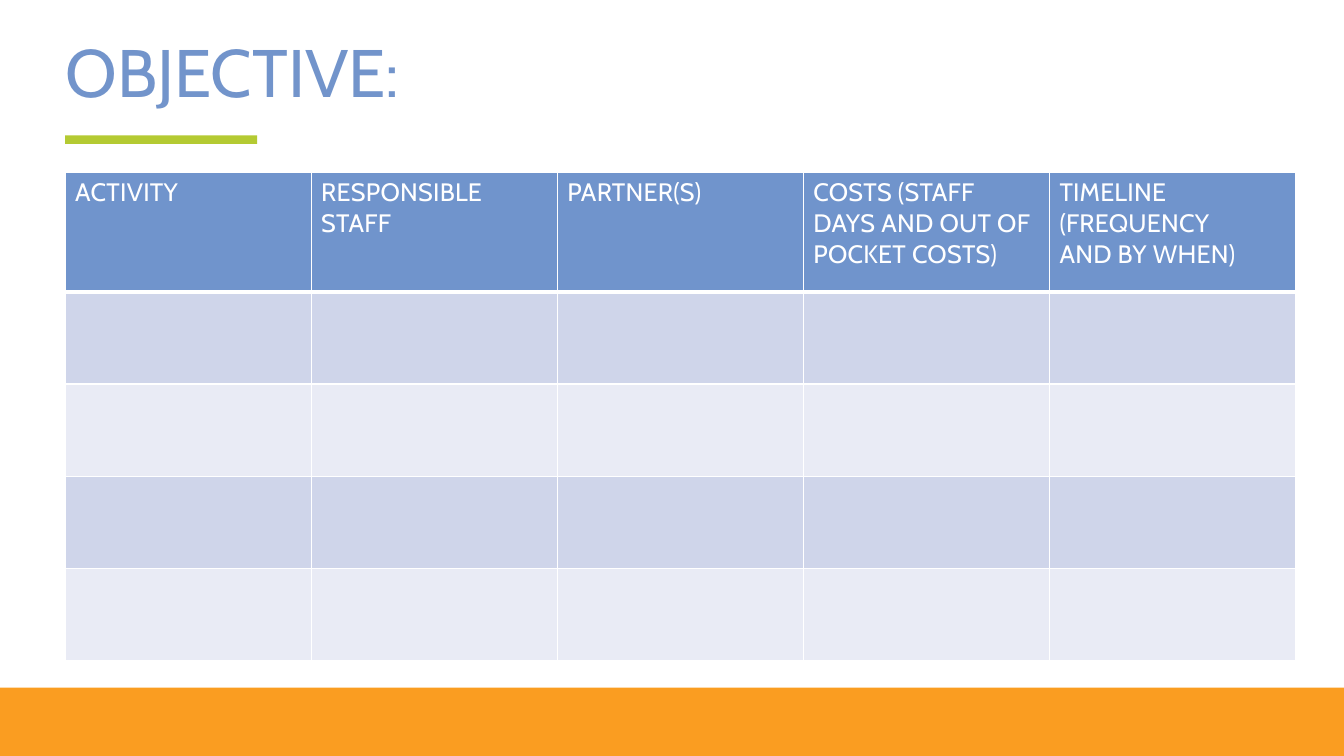
from lxml.etree import SubElement
from pptx import Presentation
from pptx.dml.color import RGBColor
from pptx.enum.shapes import MSO_SHAPE
from pptx.enum.text import MSO_AUTO_SIZE
from pptx.oxml.ns import qn
from pptx.util import Pt

PX = 9525
FONT = "Cabin"
WHITE = RGBColor(0xFF, 0xFF, 0xFF)
TITLE_BLUE = RGBColor(0x72, 0x94, 0xCB)
HEADER_BLUE = RGBColor(0x70, 0x94, 0xCC)
BAND_DARK = RGBColor(0xCF, 0xD5, 0xEA)
BAND_LIGHT = RGBColor(0xE9, 0xEB, 0xF5)
ORANGE = RGBColor(0xFA, 0x9D, 0x21)
GREEN = RGBColor(0xB4, 0xCA, 0x32)

HEADERS = [
    "ACTIVITY",
    "RESPONSIBLE STAFF",
    "PARTNER(S)",
    "COSTS (STAFF DAYS AND OUT OF POCKET COSTS)",
    "TIMELINE (FREQUENCY \nAND BY WHEN)",
]
BODY_ROWS = 4
HEADER_HEIGHT = 114


def px(*lengths):
    return [n * PX for n in lengths]


def write(tf, text, size=18, color=WHITE, spacing=None):
    p = tf.paragraphs[0]
    for i, line in enumerate(text.split("\n")):
        if i:
            p.add_line_break()
        r = p.add_run()
        r.text = line
        r.font.name = FONT
        r.font.size = Pt(size)
        r.font.color.rgb = color
        if spacing is not None:
            r.font._element.set("spc", str(round(spacing * 100)))


def add_title(s, text, x, y, w, h):
    tf = s.shapes.add_textbox(*px(x, y, w, h)).text_frame
    tf.word_wrap = False
    tf.auto_size = MSO_AUTO_SIZE.SHAPE_TO_FIT_TEXT
    write(tf, text, size=48, color=TITLE_BLUE)


def add_bar(s, color, x, y, w, h):
    sp = s.shapes.add_shape(MSO_SHAPE.RECTANGLE, *px(x, y, w, h))
    sp.shadow.inherit = False
    sp.fill.solid()
    sp.fill.fore_color.rgb = color
    sp.line.fill.background()


def set_borders(cell, top, bottom):
    tc_pr = cell._tc.get_or_add_tcPr()
    for side, width in (("L", 1), ("R", 1), ("T", top), ("B", bottom)):
        ln = SubElement(tc_pr, qn(f"a:ln{side}"), w=str(Pt(width)))
        fill = SubElement(ln, qn("a:solidFill"))
        SubElement(fill, qn("a:srgbClr"), val=str(WHITE))


def style_cell(cell, row):
    set_borders(cell, top=3 if row == 1 else 1, bottom=3 if row == 0 else 1)
    cell.fill.solid()
    if row == 0:
        cell.fill.fore_color.rgb = HEADER_BLUE
    else:
        cell.fill.fore_color.rgb = BAND_DARK if row % 2 else BAND_LIGHT


def add_plan_table(s, x, y, w, h):
    frame = s.shapes.add_table(BODY_ROWS + 1, len(HEADERS), *px(x, y, w, h))
    table = frame.table
    for column in table.columns:
        column.width = w * PX // len(HEADERS)
    for i, row in enumerate(table.rows):
        row.height = (HEADER_HEIGHT * PX if i == 0
                      else (h - HEADER_HEIGHT) * PX // BODY_ROWS)
        for cell in row.cells:
            style_cell(cell, i)
    for cell, text in zip(table.rows[0].cells, HEADERS):
        write(cell.text_frame, text, spacing=0.2)


def main():
    prs = Presentation()
    prs.slide_width, prs.slide_height = px(1280, 720)
    s = prs.slides.add_slide(prs.slide_layouts[6])
    add_title(s, "OBJECTIVE:", 53, 24, 355, 87)
    add_plan_table(s, 62, 164, 1172, 465)
    add_bar(s, ORANGE, 0, 655, 1280, 65)
    add_bar(s, GREEN, 62, 129, 183, 8)
    prs.save("out.pptx")


if __name__ == "__main__":
    main()
